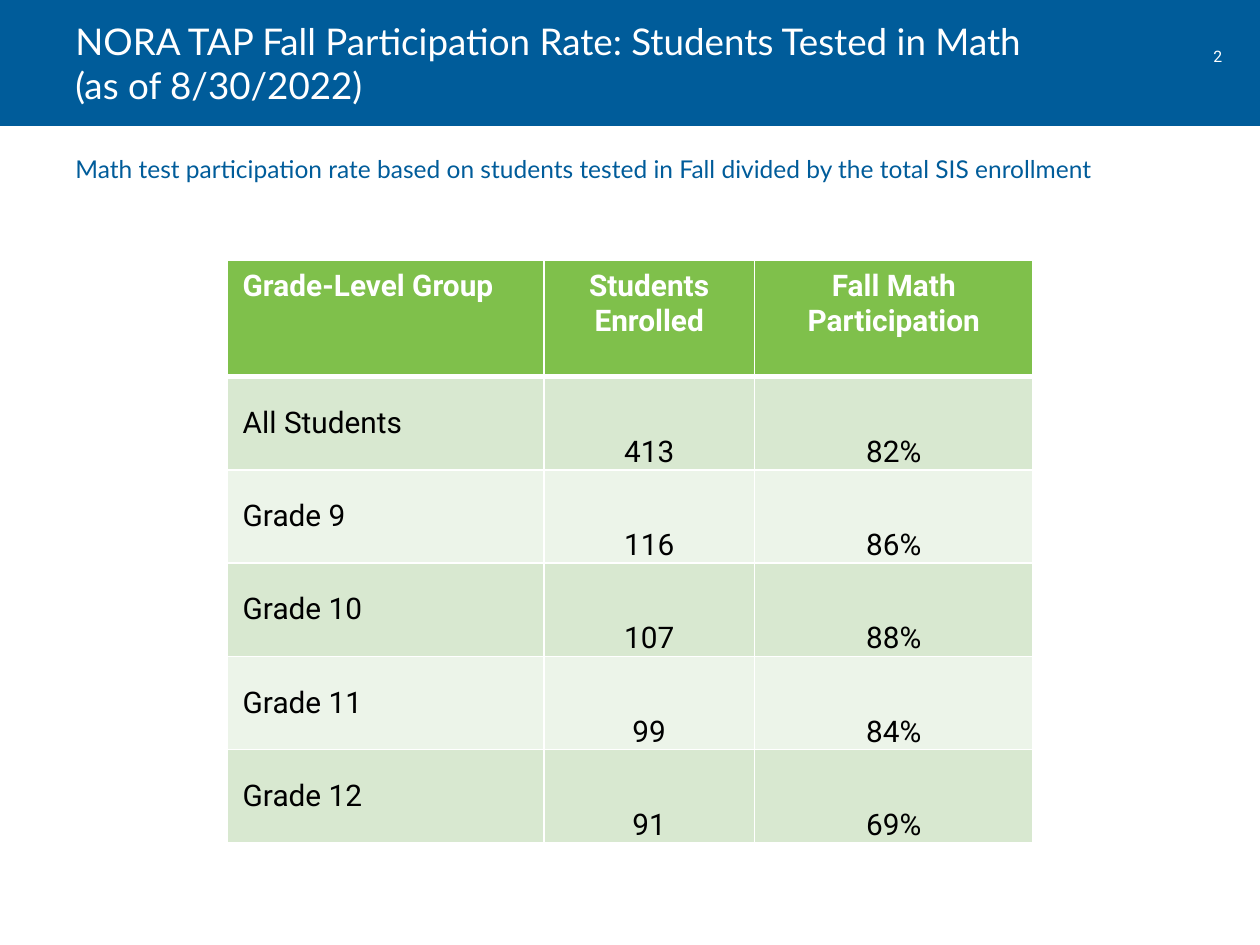
"""Build the slide on Fall math test participation by grade level."""
import dataclasses
import typing

import lxml.etree
import pptx
import pptx.dml.color
import pptx.enum.shapes
import pptx.enum.text
import pptx.oxml.ns
import pptx.util

Pt = pptx.util.Pt
Align = pptx.enum.text.PP_ALIGN
Anchor = pptx.enum.text.MSO_ANCHOR


@dataclasses.dataclass(frozen=True)
class Theme:
    blue: str = "005C9A"
    green: str = "7FC04B"
    bands: tuple = ("D8E8D0", "ECF4E9")
    white: str = "FFFFFF"
    black: str = "000000"
    head: str = "Lato"
    body: str = "Roboto"
    title: float = 21
    note: float = 14
    cell: float = 17
    page: float = 9


THEME = Theme()


class Style(typing.NamedTuple):
    face: str
    size: float
    color: str
    bold: bool = False
    align: Align = Align.LEFT


class Label(typing.NamedTuple):
    text: str
    box: tuple
    style: Style
    anchor: Anchor = Anchor.TOP


class Kind(typing.NamedTuple):
    style: Style
    anchor: Anchor
    inset: tuple


LABELS = (
    Label("2", (679.7, 23, 32.4, 18),
          Style(THEME.body, THEME.page, THEME.white, align=Align.CENTER)),
    Label("Math test participation rate based on students tested in Fall "
          "divided by the total SIS enrollment", (36, 84.2, 648, 37.4),
          Style(THEME.head, THEME.note, THEME.blue)),
    Label("NORA TAP Fall Participation Rate: Students Tested in Math\v"
          "(as of 8/30/2022)", (36, 0, 641.5, 72),
          Style(THEME.head, THEME.title, THEME.white), Anchor.MIDDLE),
)

ROWS = (
    ("Grade-Level Group", "Students Enrolled", "Fall Math Participation"),
    ("All Students", "413", "82%"),
    ("Grade 9", "116", "86%"),
    ("Grade 10", "107", "88%"),
    ("Grade 11", "99", "84%"),
    ("Grade 12", "91", "69%"),
)
WIDTHS = (181.2, 120.4, 159.2)
HEAD_TALL, ROW_TALL = 66.2, 53.3
WIDE, TIGHT = (9.1, 4.6, 9.1, 4.6), (0.7, 0.7, 0.7, 0)


def put(thing: typing.Any, values: dict) -> None:
    """Set each named value on the thing."""
    for name, value in values.items():
        setattr(thing, name, value)


def tint(color: str) -> pptx.dml.color.RGBColor:
    """Turn a hex string into a colour."""
    return pptx.dml.color.RGBColor.from_string(color)


def write(frame: typing.Any, text: str, style: Style) -> None:
    """Fill a text frame with one styled paragraph."""
    line = frame.paragraphs[0]
    put(line, {"text": text, "alignment": style.align})
    for run in line.runs:
        put(run.font, {"name": style.face, "size": Pt(style.size),
                       "bold": style.bold})
        run.font.color.rgb = tint(style.color)


def add_label(slide: typing.Any, label: Label) -> None:
    """Add one text box."""
    frame = slide.shapes.add_textbox(*map(Pt, label.box)).text_frame
    put(frame, {"word_wrap": True, "vertical_anchor": label.anchor})
    write(frame, label.text, label.style)


def add_edge(cell: typing.Any, side: str, width: float) -> None:
    """Draw one white border on a cell."""
    name = pptx.oxml.ns.qn
    props = cell._tc.get_or_add_tcPr()
    edge = lxml.etree.SubElement(props, name(f"a:ln{side}"), w=str(Pt(width)))
    fill = lxml.etree.SubElement(edge, name("a:solidFill"))
    lxml.etree.SubElement(fill, name("a:srgbClr"), val=THEME.white)


def pick_kind(row: int, col: int) -> Kind:
    """Choose the format for a cell by its place."""
    top = row == 0
    style = Style(THEME.body, THEME.cell, THEME.white if top else THEME.black,
                  top, Align.CENTER if col else Align.LEFT)
    if top:
        return Kind(style, Anchor.TOP, WIDE)
    if col:
        return Kind(style, Anchor.BOTTOM, TIGHT)
    return Kind(style, Anchor.MIDDLE, WIDE)


def fill_cell(cell: typing.Any, row: int, col: int, text: str) -> None:
    """Format one cell and write its text."""
    kind = pick_kind(row, col)
    sides = ("margin_left", "margin_top", "margin_right", "margin_bottom")
    put(cell, dict(zip(sides, map(Pt, kind.inset))))
    cell.vertical_anchor = kind.anchor
    thick = {(0, "B"), (1, "T")}
    for side in "LRTB":
        add_edge(cell, side, 3 if (row, side) in thick else 1)
    cell.fill.solid()
    color = THEME.bands[(row - 1) % 2] if row else THEME.green
    cell.fill.fore_color.rgb = tint(color)
    write(cell.text_frame, text, kind.style)


def add_grid(slide: typing.Any) -> None:
    """Add the table of rates."""
    talls = (HEAD_TALL,) + (ROW_TALL,) * (len(ROWS) - 1)
    box = (129.6, 149, sum(WIDTHS), sum(talls))
    table = slide.shapes.add_table(len(ROWS), len(WIDTHS), *map(Pt, box)).table
    put(table, {"first_row": False, "horz_banding": False})
    for column, width in zip(table.columns, WIDTHS):
        column.width = Pt(width)
    for line, tall in zip(table.rows, talls):
        line.height = Pt(tall)
    for row, texts in enumerate(ROWS):
        for col, text in enumerate(texts):
            fill_cell(table.cell(row, col), row, col, text)


def add_band(slide: typing.Any) -> None:
    """Add the blue band behind the title."""
    band = slide.shapes.add_shape(pptx.enum.shapes.MSO_SHAPE.RECTANGLE,
                                  *map(Pt, (0, 0, 720, 72)))
    band.shadow.inherit = False
    band.fill.solid()
    band.fill.fore_color.rgb = tint(THEME.blue)
    band.line.fill.background()


def main() -> None:
    """Build and save the deck."""
    deck = pptx.Presentation()
    put(deck, {"slide_width": Pt(720), "slide_height": Pt(540)})
    slide = deck.slides.add_slide(deck.slide_layouts[6])
    add_band(slide)
    for label in LABELS:
        add_label(slide, label)
    add_grid(slide)
    deck.save("out.pptx")


if __name__ == "__main__":
    main()
